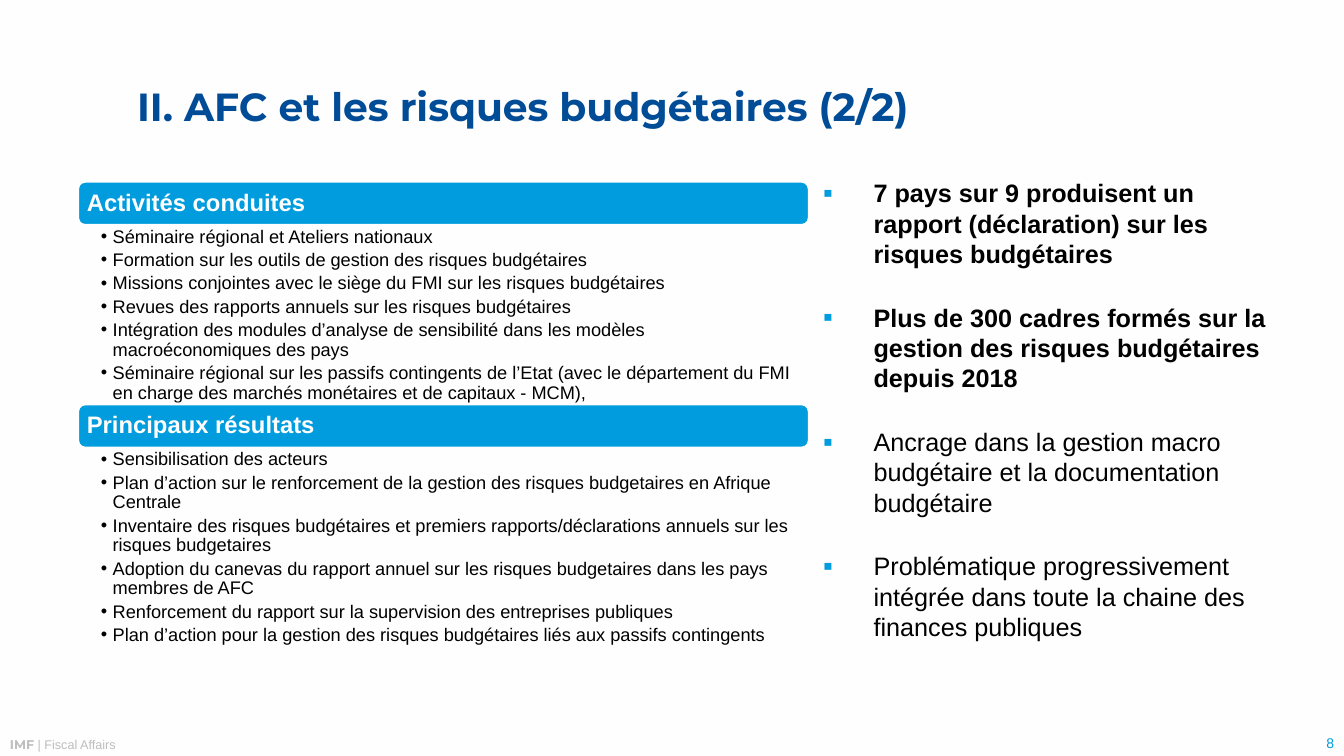
"""Build the slide on fiscal risks: activities and results on the left, key messages on the right."""
from dataclasses import dataclass

from lxml.etree import SubElement
from pptx import Presentation
from pptx.dml.color import RGBColor
from pptx.enum.shapes import MSO_SHAPE
from pptx.enum.text import MSO_ANCHOR, PP_ALIGN
from pptx.oxml.ns import qn
from pptx.util import Pt

TITLE = "II. AFC et les risques budgétaires (2/2)"
SECTIONS = [
    ("Activités conduites", [
        "Séminaire régional et Ateliers nationaux",
        "Formation sur les outils de gestion des risques budgétaires",
        "Missions conjointes avec le siège du FMI sur les risques budgétaires",
        "Revues des rapports annuels sur les risques budgétaires",
        "Intégration des modules d’analyse de sensibilité dans les modèles macroéconomiques des pays",
        "Séminaire régional sur les passifs contingents de l’Etat (avec le département du FMI "
        "en charge des marchés monétaires et de capitaux - MCM),",
    ], 127.5),
    ("Principaux résultats", [
        "Sensibilisation des acteurs",
        "Plan d’action sur le renforcement de la gestion des risques budgetaires en Afrique Centrale",
        "Inventaire des risques budgétaires et premiers rapports/déclarations annuels sur les "
        "risques budgetaires",
        "Adoption du canevas du rapport annuel sur les risques budgetaires dans les pays membres de AFC",
        "Renforcement du rapport sur la supervision des entreprises publiques",
        "Plan d’action pour la gestion des risques budgétaires liés aux passifs contingents",
    ], 141),
]
MESSAGES = [
    ("7 pays sur 9 produisent un rapport (déclaration) sur les risques budgétaires", True),
    ("Plus de 300 cadres formés sur la gestion des risques budgétaires depuis 2018", True),
    ("Ancrage dans la gestion macro budgétaire et la documentation budgétaire", False),
    ("Problématique progressivement intégrée dans toute la chaine des finances publiques", False),
]
FOOTER = [("IMF ", True), ("| Fiscal Affairs", False)]
PAGE_NUMBER = "8"


@dataclass(frozen=True)
class Theme:
    """Colours, fonts and type sizes of the slide."""
    white: str = "FEFEFE"
    black: str = "000000"
    navy: str = "004C97"
    blue: str = "009CDE"
    grey: str = "BEBEBE"
    body_font: str = "Arial"
    title_font: str = "Montserrat"
    title_size: float = 28
    message_size: float = 18
    heading_size: float = 17
    item_size: float = 13
    page_size: float = 10
    footer_size: float = 9


THEME = Theme()
SECTION_LEFT, SECTION_TOP, SECTION_WIDTH, HEADING_HEIGHT = 55.5, 129.5, 522.5, 31.5


def add_bullet(paragraph, character, indent, color=None, percent=None):
    """Give a paragraph a hanging bullet."""
    properties = paragraph._p.get_or_add_pPr()
    properties.set("marL", str(Pt(indent)))
    properties.set("indent", str(-Pt(indent)))
    if color:
        SubElement(SubElement(properties, qn("a:buClr")), qn("a:srgbClr")).set("val", color)
    if percent:
        SubElement(properties, qn("a:buSzPct")).set("val", str(percent * 1000))
    SubElement(properties, qn("a:buFont")).set("typeface", THEME.body_font)
    SubElement(properties, qn("a:buChar")).set("char", character)


def write_text(shape, paragraphs, *, size, color, font=THEME.body_font, bold_font=None,
               insets=(0, 0, 0, 0), anchor=MSO_ANCHOR.TOP, align=PP_ALIGN.LEFT,
               line_spacing=None, before=0, after=0, bullet=None):
    """Write paragraphs, each a list of (text, bold) runs, into a shape."""
    frame = shape.text_frame
    frame.word_wrap = True
    frame.vertical_anchor = anchor
    frame.margin_left, frame.margin_top, frame.margin_right, frame.margin_bottom = map(Pt, insets)
    for index, runs in enumerate(paragraphs):
        paragraph = frame.add_paragraph() if index else frame.paragraphs[0]
        paragraph.alignment = align
        paragraph.line_spacing = line_spacing
        paragraph.space_before, paragraph.space_after = Pt(before), Pt(after)
        if bullet:
            add_bullet(paragraph, **bullet)
        for text, bold in runs:
            run = paragraph.add_run()
            run.text = text
            run.font.size, run.font.bold = Pt(size), bold
            run.font.name = bold_font if bold and bold_font else font
            run.font.color.rgb = RGBColor.from_string(color)


def add_box(slide, left, top, width, height, paragraphs, **text_format):
    """Add a text box."""
    box = slide.shapes.add_textbox(Pt(left), Pt(top), Pt(width), Pt(height))
    write_text(box, paragraphs, **text_format)


def add_section(slide, top, heading, items, list_height):
    """Add a heading bar with its list and return the bottom edge."""
    bar = slide.shapes.add_shape(MSO_SHAPE.ROUNDED_RECTANGLE, Pt(SECTION_LEFT), Pt(top),
                                 Pt(SECTION_WIDTH), Pt(HEADING_HEIGHT))
    bar.shadow.inherit = False
    bar.fill.solid()
    bar.fill.fore_color.rgb = RGBColor.from_string(THEME.blue)
    bar.line.color.rgb = RGBColor.from_string(THEME.white)
    bar.line.width = Pt(2)
    write_text(bar, [[(heading, True)]], size=THEME.heading_size, color=THEME.white,
               insets=(5, 5, 5, 5), anchor=MSO_ANCHOR.MIDDLE, line_spacing=0.9)
    list_top = top + HEADING_HEIGHT
    add_box(slide, SECTION_LEFT, list_top, SECTION_WIDTH, list_height,
            [[(item, False)] for item in items], size=THEME.item_size, color=THEME.black,
            insets=(16.5, 1.5, 9.5, 1.5), line_spacing=0.9, after=2.6,
            bullet={"character": "•", "indent": 8.5})
    return list_top + list_height


def main():
    """Compose and save the slide."""
    presentation = Presentation()
    presentation.slide_width, presentation.slide_height = Pt(960), Pt(540)
    slide = presentation.slides.add_slide(presentation.slide_layouts[6])
    slide.background.fill.solid()
    slide.background.fill.fore_color.rgb = RGBColor.from_string(THEME.white)

    add_box(slide, 98, 39, 764.5, 77, [[(TITLE, True)]], size=THEME.title_size,
            color=THEME.navy, font=THEME.title_font, anchor=MSO_ANCHOR.MIDDLE, line_spacing=0.9)
    add_box(slide, 588, 116, 317, 381.5, [[message] for message in MESSAGES],
            size=THEME.message_size, color=THEME.black, insets=(0, 11, 0, 0), before=24,
            bullet={"character": "▪", "indent": 36, "color": THEME.blue, "percent": 110})
    top = SECTION_TOP
    for heading, items, list_height in SECTIONS:
        top = add_section(slide, top, heading, items, list_height)

    add_box(slide, 0, 522.5, 720, 18, [FOOTER], size=THEME.footer_size, color=THEME.grey,
            bold_font=THEME.title_font, insets=(7.2, 3.6, 7.2, 3.6))
    add_box(slide, 865, 521, 95, 19.5, [[(PAGE_NUMBER, False)]], size=THEME.page_size,
            color=THEME.blue, insets=(7.2, 3.6, 7.2, 3.6), anchor=MSO_ANCHOR.BOTTOM,
            align=PP_ALIGN.RIGHT)
    presentation.save("out.pptx")


if __name__ == "__main__":
    main()
